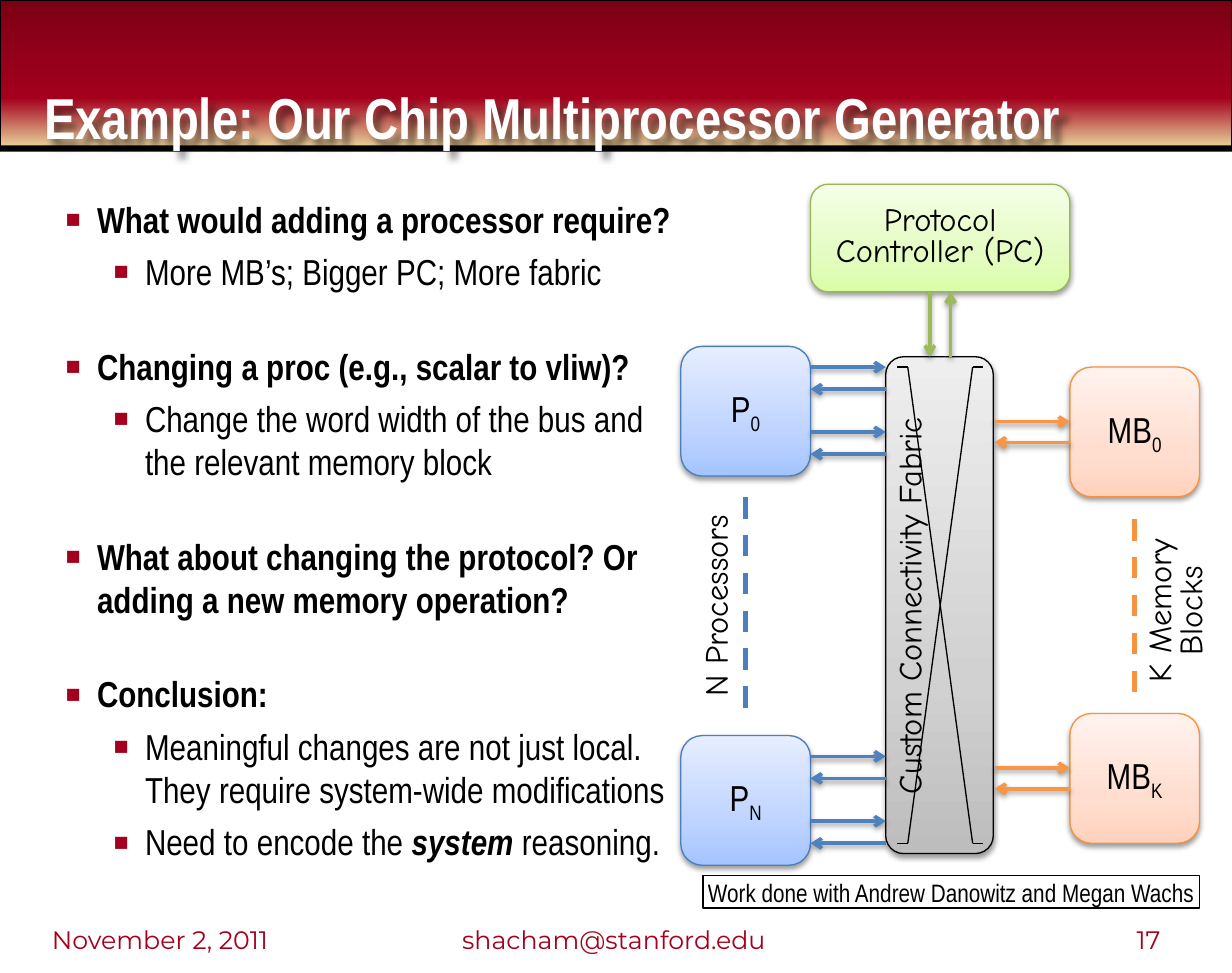
"""Build the chip multiprocessor generator slide."""
from lxml.etree import SubElement
from pptx import Presentation
from pptx.dml.color import RGBColor
from pptx.enum.dml import MSO_LINE
from pptx.enum.shapes import MSO_CONNECTOR as CONN, MSO_SHAPE as SHAPE
from pptx.enum.text import MSO_ANCHOR as ANCHOR, MSO_AUTO_SIZE as FIT, PP_ALIGN as ALIGN
from pptx.oxml.ns import qn
from pptx.util import Inches, Pt

THEME = {
    "black": "000000", "white": "FFFFFF", "red": "A4001D",
    "header": [(0, "7B0014"), (67, "A4001D"), (100, "E7D19A")],
    "blue": {"stops": [(0, "A4C4FF"), (35, "BFD4FF"), (100, "E6EEFF")], "edge": "4B7EBC", "arrow": "4F81BD"},
    "orange": {"stops": [(0, "FFD2BD"), (35, "FFDED0"), (100, "FFF2ED")], "edge": "F69240", "arrow": "F79646"},
    "green": {"stops": [(0, "DAFDA7"), (35, "E4FCC2"), (100, "F5FFE7")], "edge": "98B955", "arrow": "9BBB59"},
    "gray": {"stops": [(0, "BDBDBD"), (35, "D1D1D1"), (100, "EEEEEE")], "edge": "000000"},
    "title": {"name": "Arial Narrow", "size": Pt(32), "bold": True},
    "body": {"name": "Arial Narrow", "size": Pt(20)},
    "credit": {"name": "Arial Narrow", "size": Pt(14)},
    "label": {"name": "Comic Neue", "size": Pt(18)},
    "footer": {"name": "Montserrat", "size": Pt(14)},
    "thin": 0.75, "arrow_width": 2, "dash_width": 3, "gap": Pt(5), "group_gap": Pt(28.5),
}
TITLE = "Example: Our Chip Multiprocessor Generator"
BOLD, EMPHASIS = {"bold": True}, {"bold": True, "italic": True}
BODY = [
    (0, [("What would adding a processor require?", BOLD)]),
    (1, [("More MB’s; Bigger PC; More fabric", {})]),
    (0, [("Changing a proc (e.g., scalar to vliw)?", BOLD)]),
    (1, [("Change the word width of the bus and the relevant memory block", {})]),
    (0, [("What about changing the protocol? Or adding a new memory operation?", BOLD)]),
    (0, [("Conclusion:", BOLD)]),
    (1, [("Meaningful changes are not just local. They require system-wide modifications", {})]),
    (1, [("Need to encode the ", {}), ("system", EMPHASIS), (" reasoning.", {})]),
]
FOOTER = [
    ("November 2, 2011", 0.4, 2.22, ALIGN.LEFT),
    ("shacham@stanford.edu", 3.22, 3.03, ALIGN.CENTER),
    ("17", 6.73, 2.22, ALIGN.RIGHT),
]
PROCESSORS = [("0", 2.67), ("N", 5.67)]
MEMORIES = [("0", 2.83), ("K", 5.5)]
DASHES = [("blue", 5.75, 3.83, 5.58), ("orange", 8.75, 4, 5.42)]
PROTOCOL = "Protocol Controller (PC)"
SIDE_LABELS = [
    ("N Processors", (4.54, 4.46, 2, 0.42)),
    ("K Memory Blocks", (8.29, 4.46, 1.58, 0.5)),
    ("Custom Connectivity Fabric", (5.12, 4.46, 3.83, 0.42)),
]
CREDIT = "Work done with Andrew Danowitz and Megan Wachs"
FABRIC_LEFT, FABRIC_RIGHT, FABRIC_TOP, FABRIC_HEIGHT = 6.83, 7.67, 2.75, 3.83
CROSS_X, CROSS_Y = (6.92, 7, 7.5, 7.58), (2.83, 6.5)


def rgb(value):
    return RGBColor.from_string(value)


def apply(target, values):
    for name, value in values.items():
        setattr(target, name, value)


def node(parent, tag, **attrs):
    return SubElement(parent, qn(tag), {k: str(v) for k, v in attrs.items()})


def add_shadow(sp, blur=3.1, dist=1.6, angle=90, alpha=38):
    spPr = sp._element.spPr
    effects = spPr.find(qn("a:effectLst"))
    if effects is None:
        effects = node(spPr, "a:effectLst")
    outer = node(effects, "a:outerShdw", blurRad=Pt(blur), dist=Pt(dist),
                 dir=angle * 60000, algn="t", rotWithShape=0)
    node(node(outer, "a:srgbClr", val=THEME["black"]), "a:alpha", val=alpha * 1000)


def set_gradient(sp, stops, angle):
    sp.fill.gradient()
    grad = sp._element.spPr.find(qn("a:gradFill"))
    for child in list(grad):
        grad.remove(child)
    gs_list = node(grad, "a:gsLst")
    for pos, color in stops:
        node(node(gs_list, "a:gs", pos=pos * 1000), "a:srgbClr", val=color)
    node(grad, "a:lin", ang=angle * 60000, scaled=0)


def add_runs(p, runs, font, color):
    for text, extra in runs:
        r = p.add_run()
        r.text = text
        subscript = extra.get("subscript")
        apply(r.font, {"bold": False, **font, **{k: v for k, v in extra.items() if k != "subscript"}})
        r.font.color.rgb = rgb(color)
        if subscript:
            r._r.get_or_add_rPr().set("baseline", "-25000")


def write(sp, runs, font, color=THEME["black"], align=ALIGN.CENTER, anchor=ANCHOR.MIDDLE,
          spacing=1.0, margins=(0.1, 0.05)):
    tf = sp.text_frame
    x, y = map(Inches, margins)
    apply(tf, {"word_wrap": True, "auto_size": FIT.NONE, "vertical_anchor": anchor,
               "margin_left": x, "margin_right": x, "margin_top": y, "margin_bottom": y})
    p = tf.paragraphs[0]
    apply(p, {"alignment": align, "line_spacing": spacing})
    add_runs(p, runs, font, color)


def add_box(s, kind, place, fill=None, line=None):
    sp = s.shapes.add_shape(kind, *map(Inches, place))
    sp.shadow.inherit = False
    if fill:
        sp.fill.solid()
        sp.fill.fore_color.rgb = rgb(fill)
    else:
        sp.fill.background()
    if line:
        sp.line.color.rgb = rgb(line)
        sp.line.width = Pt(THEME["thin"])
    else:
        sp.line.fill.background()
    return sp


def add_block(s, place, style):
    sp = add_box(s, SHAPE.ROUNDED_RECTANGLE, place, line=THEME[style]["edge"])
    set_gradient(sp, THEME[style]["stops"], 270)
    add_shadow(sp)
    return sp


def add_line(s, start, end, color, width=THEME["thin"], dash=None):
    c = s.shapes.add_connector(CONN.STRAIGHT, *map(Inches, (*start, *end)))
    c.line.color.rgb = rgb(color)
    apply(c.line, {"width": Pt(width), "dash_style": dash})
    node(c._element.spPr, "a:effectLst")
    return c


def add_arrow(s, start, end, style):
    c = add_line(s, start, end, THEME[style]["arrow"], THEME["arrow_width"])
    node(c.line._get_or_add_ln(), "a:tailEnd", type="arrow")
    add_shadow(c)


def add_text(s, place):
    return s.shapes.add_textbox(*map(Inches, place))


def add_header(s):
    band = add_box(s, SHAPE.RECTANGLE, (0, 0, 9.5, 1.13), line=THEME["black"])
    set_gradient(band, THEME["header"], 90)
    add_box(s, SHAPE.RECTANGLE, (0, 1.12, 9.5, 0.05), fill=THEME["black"])
    title = s.shapes.title
    s.shapes._spTree.append(title._element)
    apply(title, dict(zip(("left", "top", "width", "height"), map(Inches, (0.24, 0.11, 8.26, 1.06)))))
    write(title, [(TITLE, {})], THEME["title"], THEME["white"], ALIGN.LEFT, ANCHOR.BOTTOM, 0.85, (0.1, 0))
    add_shadow(title, 4, 4, 45, 50)


def add_body(s):
    tf = add_text(s, (0.4, 1.47, 4.93, 5.18)).text_frame
    apply(tf, {"word_wrap": True, "auto_size": FIT.NONE})
    for i, (level, runs) in enumerate(BODY):
        p = tf.add_paragraph() if i else tf.paragraphs[0]
        p.level = level
        if i:
            p.space_before = THEME["gap"] if level else THEME["group_gap"]
        pPr = p._p.get_or_add_pPr()
        pPr.set("marL", str(Inches((0.25, 0.62)[level])))
        pPr.set("indent", str(-Inches(0.25)))
        node(node(pPr, "a:buClr"), "a:srgbClr", val=THEME["red"])
        node(pPr, "a:buSzPct", val=135000)
        node(pPr, "a:buFont", typeface="Arial")
        node(pPr, "a:buChar", char="▪")
        add_runs(p, runs, THEME["body"], THEME["black"])


def add_fabric(s):
    add_block(s, (FABRIC_LEFT, FABRIC_TOP, 0.83, FABRIC_HEIGHT), "gray")
    for near, far in (CROSS_Y, CROSS_Y[::-1]):
        points = list(zip(CROSS_X, (near, near, far, far)))
        for start, end in zip(points, points[1:]):
            add_line(s, start, end, THEME["black"])


def add_units(s, name, units, left, style, port, fabric, offsets):
    for index, top in units:
        sp = add_block(s, (left, top, 1, 1), style)
        write(sp, [(name, {}), (index, {"subscript": True})], THEME["body"])
        for i, offset in enumerate(offsets):
            ends = [(x, top + offset) for x in sorted((port, fabric))]
            add_arrow(s, *(ends[::-1] if i % 2 else ends), style)


def add_diagram(s):
    add_fabric(s)
    add_units(s, "P", PROCESSORS, 5.25, "blue", 6.25, FABRIC_LEFT, (0.16, 0.33, 0.66, 0.83))
    add_units(s, "MB", MEMORIES, 8.25, "orange", 8.25, FABRIC_RIGHT, (0.42, 0.58))
    for style, x, top, bottom in DASHES:
        add_line(s, (x, top), (x, bottom), THEME[style]["edge"], THEME["dash_width"], MSO_LINE.DASH)
    controller = add_block(s, (6.25, 1.42, 2, 0.83), "green")
    write(controller, [(PROTOCOL, {})], THEME["label"], spacing=0.8)
    add_arrow(s, (7.17, 2.25), (7.17, FABRIC_TOP), "green")
    add_arrow(s, (7.33, FABRIC_TOP), (7.33, 2.25), "green")
    for text, place in SIDE_LABELS:
        sp = add_text(s, place)
        sp.rotation = 270
        write(sp, [(text, {})], THEME["label"], spacing=0.8)


def main():
    prs = Presentation()
    apply(prs, {"slide_width": Inches(9.5), "slide_height": Inches(7.5)})
    s = prs.slides.add_slide(prs.slide_layouts[5])
    add_header(s)
    add_body(s)
    for text, left, width, align in FOOTER:
        write(add_text(s, (left, 6.98, width, 0.52)), [(text, {})], THEME["footer"], THEME["red"], align, margins=(0, 0))
    add_diagram(s)
    credit = add_box(s, SHAPE.RECTANGLE, (5.42, 6.75, 3.83, 0.25), line=THEME["black"])
    write(credit, [(CREDIT, {})], THEME["credit"], margins=(0, 0.05))
    prs.save("out.pptx")


if __name__ == "__main__":
    main()
